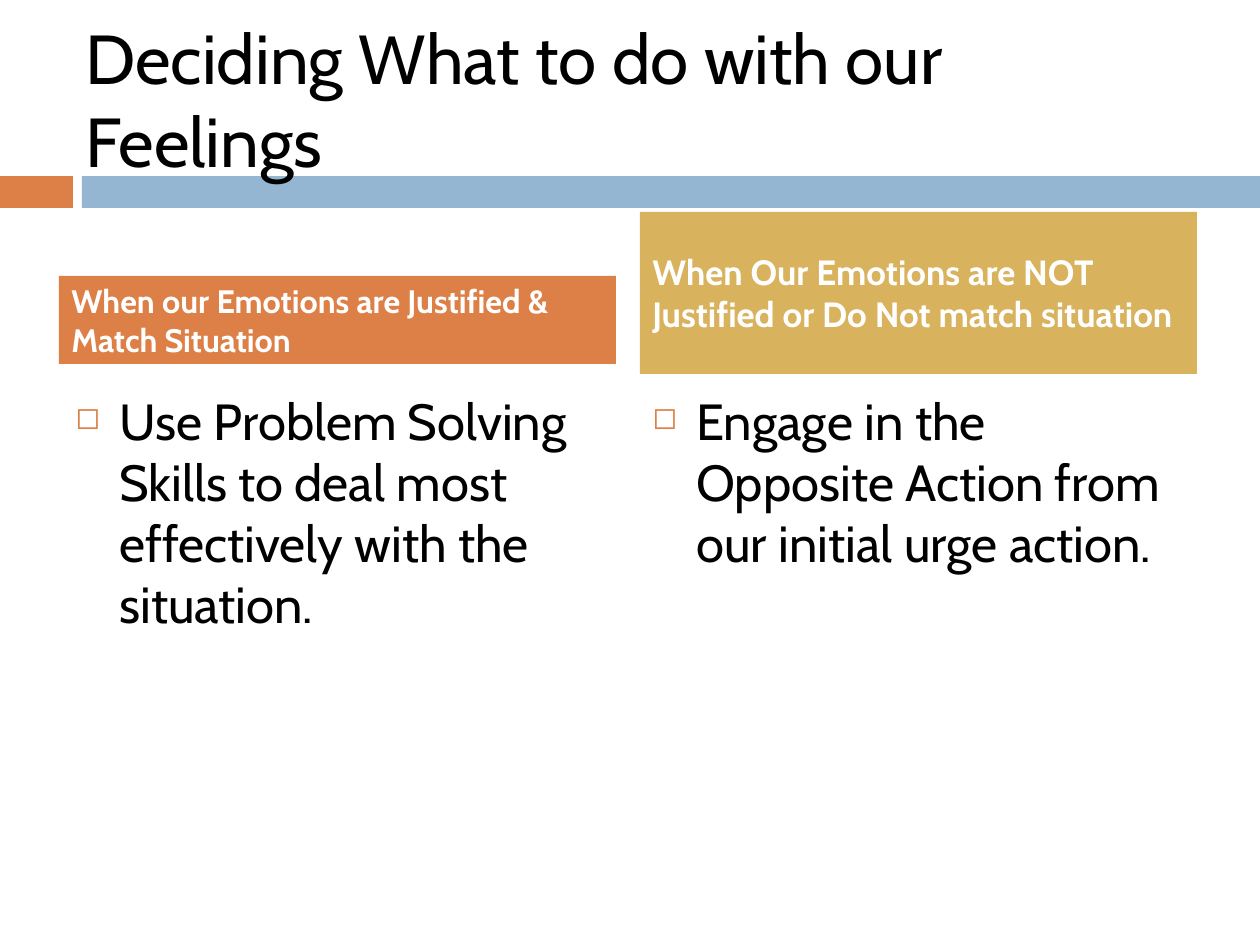
from lxml import etree
from pptx import Presentation
from pptx.dml.color import RGBColor
from pptx.enum.shapes import MSO_SHAPE
from pptx.enum.text import MSO_ANCHOR, PP_ALIGN
from pptx.oxml.ns import qn
from pptx.util import Pt

PX = 914400 // 126
RECTANGLE = MSO_SHAPE.RECTANGLE
TOP, MIDDLE = MSO_ANCHOR.TOP, MSO_ANCHOR.MIDDLE
LEFT = PP_ALIGN.LEFT
ORANGE, BLUE, GOLD = "DD8047", "94B6D2", "D8B25C"
BLACK, WHITE = "000000", "FFFFFF"

deck = Presentation()
deck.slide_width, deck.slide_height = 1260 * PX, 945 * PX
page = deck.slides.add_slide(deck.slide_layouts[6])


def add_block(bounds, fill):
    lengths = [length * PX for length in bounds]
    if fill is None:
        return page.shapes.add_textbox(*lengths)
    block = page.shapes.add_shape(RECTANGLE, *lengths)
    block.shadow.inherit = False
    block.fill.solid()
    block.fill.fore_color.rgb = RGBColor.from_string(fill)
    block.line.fill.background()
    return block


def write(box, text, size, color, anchor=MIDDLE, bold=False, before=0):
    frame = box.text_frame
    frame.word_wrap = True
    frame.vertical_anchor = anchor
    para = frame.paragraphs[0]
    para.alignment = LEFT
    para.space_before = Pt(before)
    span = para.add_run()
    span.text = text
    span.font.name = "Cabin"
    span.font.size = Pt(size)
    span.font.bold = bold
    span.font.color.rgb = RGBColor.from_string(color)
    return para


add_block((0, 176, 73, 32), ORANGE)
add_block((82, 176, 1178, 32), BLUE)

title = add_block((73, 38, 1124, 120), None)
write(title, "Deciding What to do with our Feelings", 39.6, BLACK)

advice = [
    (63, "Use Problem Solving Skills to deal most effectively with the situation."),
    (640, "Engage in the Opposite Action from our initial urge action."),
]
for left, text in advice:
    box = add_block((left, 384, 557, 460), None)
    para = write(box, text, 29, BLACK, anchor=TOP, before=7)
    properties = para._p.get_or_add_pPr()
    properties.set("marL", str(44 * PX))
    properties.set("indent", str(-44 * PX))
    bullet_color = etree.SubElement(properties, qn("a:buClr"))
    etree.SubElement(bullet_color, qn("a:srgbClr"), val=ORANGE)
    etree.SubElement(properties, qn("a:buSzPct"), val="60000")
    etree.SubElement(properties, qn("a:buChar"), char="◻")

headings = [
    ((59, 276, 557, 88), ORANGE, 18.5,
     "When our Emotions are Justified & Match Situation"),
    ((640, 212, 557, 162), GOLD, 20,
     "When Our Emotions are NOT Justified or Do Not match situation"),
]
for bounds, fill, size, text in headings:
    heading = add_block(bounds, fill)
    write(heading, text, size, WHITE, bold=True, before=7)

deck.save("out.pptx")
